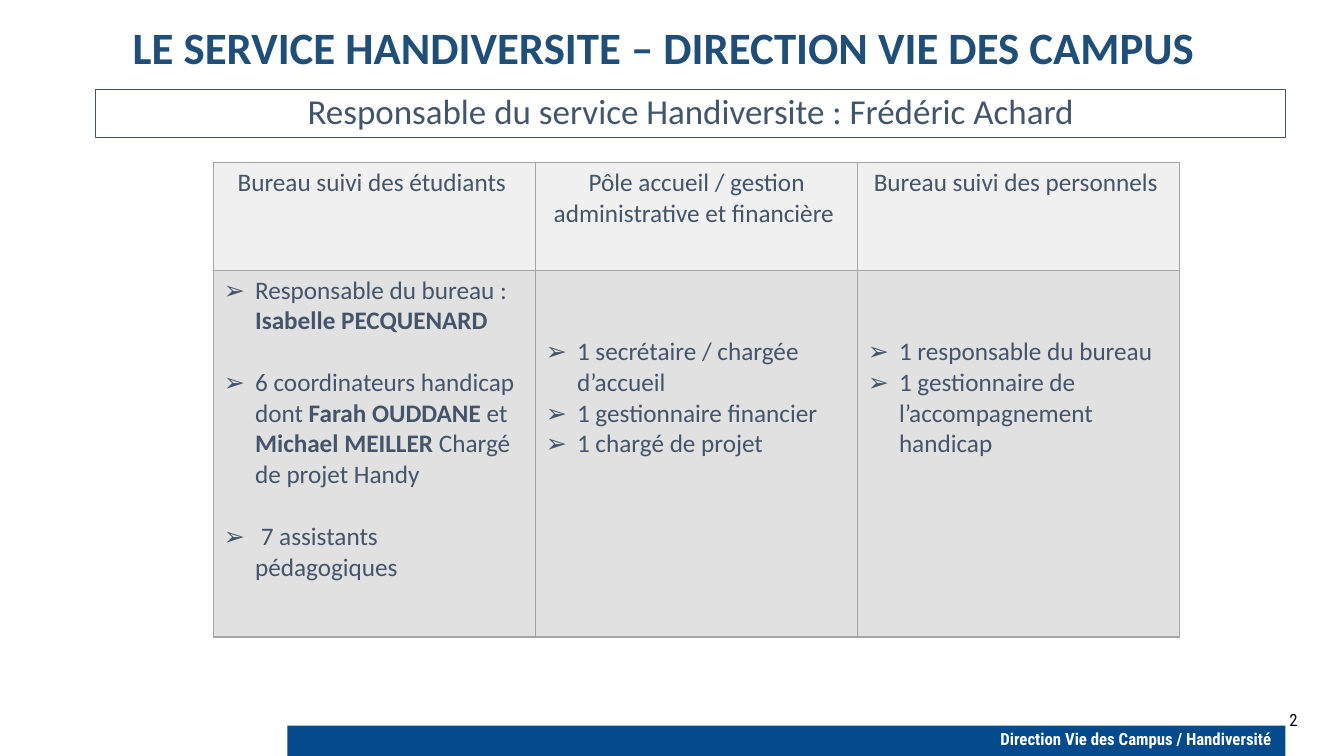
from lxml import etree
from pptx import Presentation
from pptx import util as u
from pptx.dml.color import RGBColor
from pptx.enum import shapes, text
from pptx.oxml.ns import qn

TITLE = "LE SERVICE HANDIVERSITE – DIRECTION VIE DES CAMPUS "
MANAGER = "Responsable du service Handiversite : Frédéric Achard"
FOOTER = "Direction Vie des Campus / Handiversité "
PAGE_NUMBER = "2"

# Each item is a list of (text, bold) runs.
COLUMNS = [
    {"heading": "Bureau suivi des étudiants ", "top": 0.05, "gap": 22, "items": [
        [("Responsable du bureau : ", False), ("Isabelle PECQUENARD", True)],
        [("6 coordinateurs handicap dont ", False), ("Farah OUDDANE ", True), ("et ", False),
         ("Michael MEILLER ", True), ("Chargé de projet Handy", False)],
        [(" 7 assistants pédagogiques", False)],
    ]},
    {"heading": "Pôle accueil / gestion administrative et financière ", "top": 0.66, "gap": 0, "items": [
        [("1 secrétaire / chargée d’accueil", False)],
        [("1 gestionnaire financier", False)],
        [("1 chargé de projet", False)],
    ]},
    {"heading": "Bureau suivi des personnels ", "top": 0.66, "gap": 0, "items": [
        [("1 responsable du bureau", False)],
        [("1 gestionnaire de l’accompagnement handicap", False)],
    ]},
]

SLATE, NAVY, BLUE, WHITE, BLACK = "44546A", "1F4E79", "034A8D", "FFFFFF", "000000"
HEADING_FILL, BODY_FILL, BORDER = "F0F0F0", "E1E1E1", "A5A5A5"
TABLE_BOX = (2.12, 1.61, 9.58, 4.71)
ROW_HEIGHTS = (1.07, 3.64)


def inches(*lengths):
    return [u.Inches(length) for length in lengths]


def paint(color_format, color):
    color_format.rgb = RGBColor.from_string(color)


def fill_solid(target, color):
    target.fill.solid()
    paint(target.fill.fore_color, color)


def write(paragraph, content, size=18, font="Calibri", color=SLATE, bold=False,
          align=None, line_spacing=None):
    """Add one run to the paragraph, with its format."""
    run = paragraph.add_run()
    run.text = content
    run.font.size = u.Pt(size)
    run.font.name = font
    run.font.bold = bold
    paint(run.font.color, color)
    if align is not None:
        paragraph.alignment = align
    if line_spacing is not None:
        paragraph.line_spacing = line_spacing


def add_box(slide, box, fill, line=None):
    shape = slide.shapes.add_shape(shapes.MSO_SHAPE.RECTANGLE, *inches(*box))
    shape.shadow.inherit = False
    fill_solid(shape, fill)
    if line:
        paint(shape.line.color, line)
        shape.line.width = u.Pt(0.5)
    else:
        shape.line.fill.background()
    shape.text_frame.word_wrap = True
    shape.text_frame.vertical_anchor = text.MSO_ANCHOR.TOP
    return shape


def add_bullet(paragraph):
    properties = paragraph._p.get_or_add_pPr()
    indent = u.Inches(0.31)
    properties.set("marL", str(indent))
    properties.set("indent", str(-indent))
    etree.SubElement(properties, qn("a:buFont"), typeface="Arial")
    etree.SubElement(properties, qn("a:buChar"), char="➢")


def style_cell(cell, fill):
    properties = cell._tc.get_or_add_tcPr()
    for side in ("lnL", "lnR", "lnT", "lnB"):
        line = etree.SubElement(properties, qn(f"a:{side}"), w=str(u.Pt(1)))
        solid = etree.SubElement(line, qn("a:solidFill"))
        etree.SubElement(solid, qn("a:srgbClr"), val=BORDER)
    fill_solid(cell, fill)


def add_team_table(slide):
    table = slide.shapes.add_table(2, len(COLUMNS), *inches(*TABLE_BOX)).table
    table.first_row = table.horz_banding = False
    for row, height in zip(table.rows, ROW_HEIGHTS):
        row.height = u.Inches(height)
    for index, column in enumerate(COLUMNS):
        heading, body = table.cell(0, index), table.cell(1, index)
        style_cell(heading, HEADING_FILL)
        style_cell(body, BODY_FILL)
        write(heading.text_frame.paragraphs[0], column["heading"], align=text.PP_ALIGN.CENTER)
        body.margin_top = u.Inches(column["top"])
        for position, runs in enumerate(column["items"]):
            frame = body.text_frame
            paragraph = frame.add_paragraph() if position else frame.paragraphs[0]
            add_bullet(paragraph)
            if position and column["gap"]:
                paragraph.space_before = u.Pt(column["gap"])
            for content, bold in runs:
                write(paragraph, content, bold=bold)


def main():
    presentation = Presentation()
    presentation.slide_width, presentation.slide_height = inches(13.33, 7.5)
    slide = presentation.slides.add_slide(presentation.slide_layouts[5])

    title = slide.shapes.title
    title.left, title.top, title.width, title.height = inches(0.59, 0.21, 12.09, 1.02)
    title.text_frame.auto_size = text.MSO_AUTO_SIZE.NONE
    title.text_frame.vertical_anchor = text.MSO_ANCHOR.TOP
    write(title.text_frame.paragraphs[0], TITLE, size=32, color=NAVY, bold=True,
          align=text.PP_ALIGN.CENTER, line_spacing=0.9)

    manager = add_box(slide, (0.95, 0.89, 11.8, 0.47), WHITE, SLATE)
    manager.text_frame.margin_top = manager.text_frame.margin_bottom = 0
    write(manager.text_frame.paragraphs[0], MANAGER, size=25, align=text.PP_ALIGN.CENTER)

    add_team_table(slide)

    footer = add_box(slide, (2.85, 7.2, 9.9, 0.3), BLUE)
    write(footer.text_frame.paragraphs[0], FOOTER, size=12, font="Roboto Condensed",
          color=WHITE, bold=True, align=text.PP_ALIGN.RIGHT, line_spacing=0.9)

    number = slide.shapes.add_textbox(*inches(12.69, 6.99, 0.47, 0.3))
    number.text_frame.word_wrap = True
    write(number.text_frame.paragraphs[0], PAGE_NUMBER, size=12, font="Roboto Condensed", color=BLACK)

    presentation.save("out.pptx")


if __name__ == "__main__":
    main()
